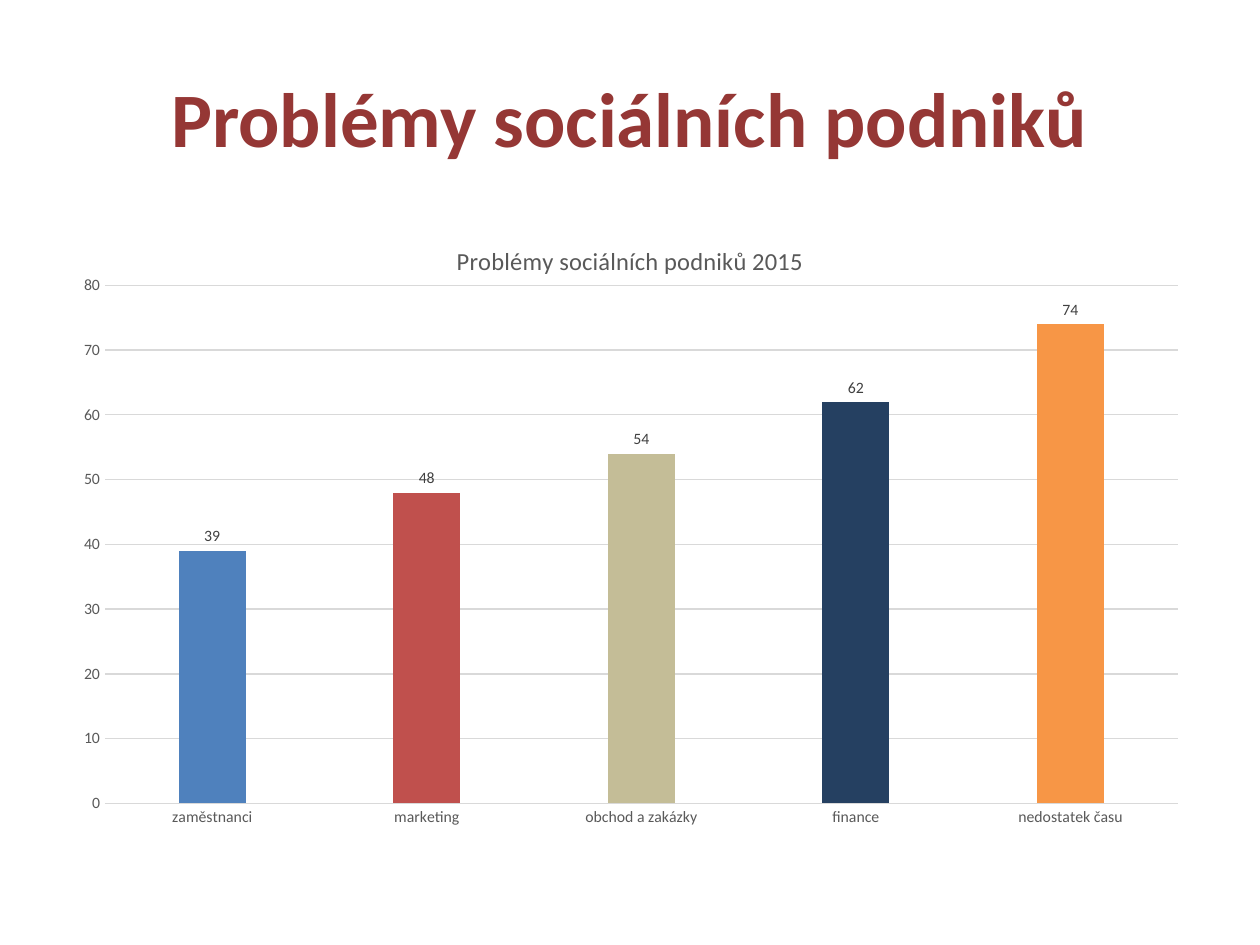
import pptx
import pptx.chart.data
import pptx.dml.color
import pptx.enum.chart
import pptx.enum.text
import pptx.oxml
import pptx.oxml.ns
import pptx.util
from pptx.util import Inches

RGBColor = pptx.dml.color.RGBColor
FONT = "Calibri"
DARK_RED = RGBColor(0x95, 0x37, 0x35)
GRAY = RGBColor(0x59, 0x59, 0x59)
LABEL_GRAY = RGBColor(0x40, 0x40, 0x40)
GRID_GRAY = RGBColor(0xD9, 0xD9, 0xD9)
BLUE = RGBColor(0x4F, 0x81, 0xBD)
RED = RGBColor(0xC0, 0x50, 0x4D)
TAN = RGBColor(0xC4, 0xBD, 0x97)
NAVY = RGBColor(0x25, 0x40, 0x61)
ORANGE = RGBColor(0xF7, 0x96, 0x46)

PROBLEMS = [
    ("zaměstnanci", 39, BLUE),
    ("marketing", 48, RED),
    ("obchod a zakázky", 54, TAN),
    ("finance", 62, NAVY),
    ("nedostatek času", 74, ORANGE),
]


def style_font(font, size, color, bold=False):
    """Set the face, size, colour and weight of a font."""
    font.name = FONT
    font.size = pptx.util.Pt(size)
    font.bold = bold
    font.color.rgb = color


def style_line(line):
    """Make a chart line thin and light gray."""
    line.color.rgb = GRID_GRAY
    line.width = pptx.util.Pt(0.75)


def place_plot(chart, left, top, width, height):
    """Fix the inner plot area as fractions of the chart."""
    plot_area = chart.plots[0]._element.getparent()
    for layout in plot_area.findall(pptx.oxml.ns.qn("c:layout")):
        plot_area.remove(layout)
    plot_area.insert(0, pptx.oxml.parse_xml(
        f'<c:layout {pptx.oxml.ns.nsdecls("c")}><c:manualLayout>'
        '<c:layoutTarget val="inner"/><c:xMode val="edge"/><c:yMode val="edge"/>'
        f'<c:x val="{left}"/><c:y val="{top}"/><c:w val="{width}"/><c:h val="{height}"/>'
        '</c:manualLayout></c:layout>'))


def add_title(page, box):
    """Fill and place the title placeholder."""
    title = page.shapes.title
    title.left, title.top, title.width, title.height = box
    frame = title.text_frame
    frame.text = "Problémy sociálních podniků"
    frame.vertical_anchor = pptx.enum.text.MSO_ANCHOR.MIDDLE
    para = frame.paragraphs[0]
    para.alignment = pptx.enum.text.PP_ALIGN.CENTER
    style_font(para.font, 44, DARK_RED, bold=True)


def style_axes(chart):
    """Format the category axis, value axis and gridlines."""
    for axis in (chart.category_axis, chart.value_axis):
        axis.major_tick_mark = pptx.enum.chart.XL_TICK_MARK.NONE
        axis.minor_tick_mark = pptx.enum.chart.XL_TICK_MARK.NONE
        style_font(axis.tick_labels.font, 9, GRAY)
    style_line(chart.category_axis.format.line)
    values = chart.value_axis
    values.minimum_scale, values.maximum_scale, values.major_unit = 0, 80, 10
    values.has_major_gridlines = True
    style_line(values.major_gridlines.format.line)
    values.format.line.fill.background()


def add_problem_chart(page, box):
    """Add the column chart with one colour for each problem."""
    data = pptx.chart.data.CategoryChartData()
    data.categories = [name for name, _, _ in PROBLEMS]
    data.add_series("Series 1", [value for _, value, _ in PROBLEMS])
    chart = page.shapes.add_chart(
        pptx.enum.chart.XL_CHART_TYPE.COLUMN_CLUSTERED, *box, data).chart
    chart.has_legend = False
    style_font(chart.font, 10, RGBColor(0, 0, 0))
    chart.has_title = True
    chart.chart_title.include_in_layout = False
    frame = chart.chart_title.text_frame
    frame.text = "Problémy sociálních podniků 2015"
    style_font(frame.paragraphs[0].font, 14, GRAY)
    style_axes(chart)

    plot = chart.plots[0]
    plot.gap_width, plot.overlap = 219, -27
    plot.vary_by_categories = False
    series = plot.series[0]
    series.format.fill.solid()
    series.format.fill.fore_color.rgb = RED
    for index, (_, _, color) in enumerate(PROBLEMS):
        if color != RED:
            fill = series.points[index].format.fill
            fill.solid()
            fill.fore_color.rgb = color
    labels = series.data_labels
    labels.show_value = True
    labels.position = pptx.enum.chart.XL_LABEL_POSITION.OUTSIDE_END
    style_font(labels.font, 9, LABEL_GRAY)
    place_plot(chart, 0.037, 0.104, 0.946, 0.831)


def main():
    """Build and save the deck."""
    deck = pptx.Presentation()
    deck.slide_width, deck.slide_height = Inches(10), Inches(7.5)
    page = deck.slides.add_slide(deck.slide_layouts[5])
    add_title(page, (Inches(0.5), Inches(0.3), Inches(9), Inches(1.25)))
    add_problem_chart(page, (Inches(0.5), Inches(1.75), Inches(9), Inches(4.95)))
    deck.save("out.pptx")


if __name__ == "__main__":
    main()
